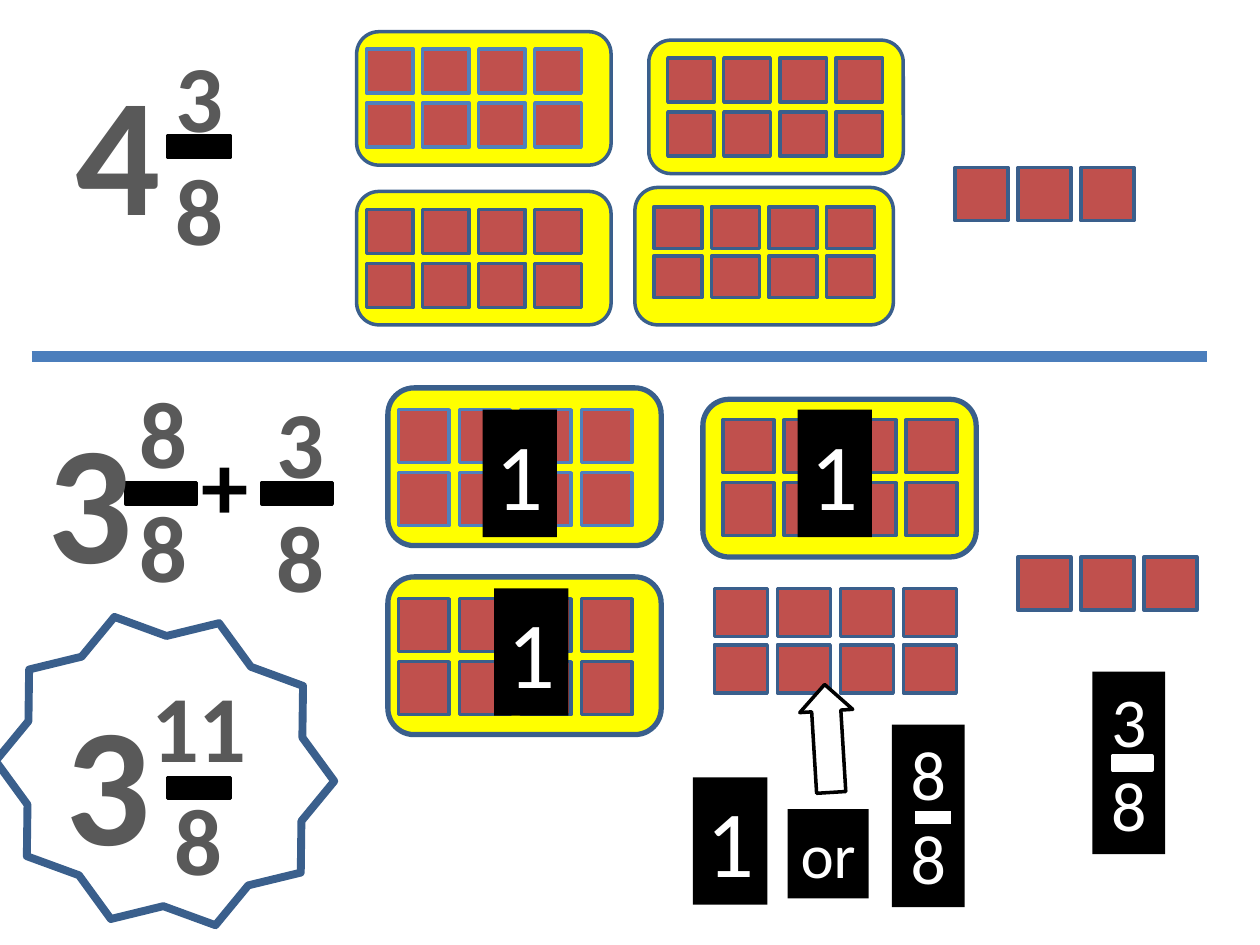
import dataclasses

import lxml.etree
import pptx
import pptx.dml.color
import pptx.enum.shapes
import pptx.enum.text
import pptx.oxml.ns
import pptx.util
from pptx.util import Cm

SHAPES = pptx.enum.shapes.MSO_SHAPE


@dataclasses.dataclass(frozen=True)
class Theme:
    font: str = "Calibri"
    digit: str = "595959"
    black: str = "000000"
    white: str = "FFFFFF"
    card: str = "FFFF00"
    tile: str = "C0504D"
    border: str = "3A5F8C"
    light_border: str = "4F81BD"
    divider: str = "4B7EBC"
    whole_size: int = 96
    part_size: int = 54
    label_size: int = 40
    word_size: int = 36


THEME = Theme()


def rgb(value):
    return pptx.dml.color.RGBColor.from_string(value)


def add_box(slide, kind, box, fill, line=None, width=2):
    """Add a filled preset shape; box is left, top, width, height in cm."""
    shape = slide.shapes.add_shape(kind, *map(Cm, box))
    shape.shadow.inherit = False
    shape.fill.solid()
    shape.fill.fore_color.rgb = rgb(fill)
    if line:
        shape.line.color.rgb = rgb(line)
        shape.line.width = pptx.util.Pt(width)
    else:
        shape.line.fill.background()
    return shape


def write(shape, text, size, color, bold=False, wrap=True):
    frame = shape.text_frame
    frame.text = text
    frame.word_wrap = wrap
    frame.vertical_anchor = pptx.enum.text.MSO_ANCHOR.TOP
    for paragraph in frame.paragraphs:
        paragraph.alignment = pptx.enum.text.PP_ALIGN.CENTER
        for run in paragraph.runs:
            run.font.name = THEME.font
            run.font.size = pptx.util.Pt(size)
            run.font.bold = bold
            run.font.color.rgb = rgb(color)


def add_text(slide, box, text, size, color=THEME.digit, wrap=True):
    write(slide.shapes.add_textbox(*map(Cm, box)), text, size, color, True, wrap)


def add_whole(slide, left, top, width, digit):
    add_text(slide, (left, top, width, 4.37), digit, THEME.whole_size)


def add_fraction(slide, left, top, width, parts, bar):
    """Add numerator over denominator; bar is left, top, width in cm."""
    add_text(slide, (left, top, width, 4.88), parts, THEME.part_size)
    add_box(slide, SHAPES.RECTANGLE, (*bar, 0.43), THEME.black, THEME.black)


def add_tiles(slide, origin, size, pitch, columns=4, rows=2, line=THEME.border):
    for row in range(rows):
        for column in range(columns):
            left = origin[0] + column * pitch[0]
            top = origin[1] + row * pitch[1]
            add_box(slide, SHAPES.RECTANGLE, (left, top, *size), THEME.tile, line)


def add_card(slide, box, width):
    add_box(slide, SHAPES.ROUNDED_RECTANGLE, box, THEME.card, THEME.border, width)


def add_label(slide, box, text, size):
    label = add_box(slide, SHAPES.RECTANGLE, box, THEME.black)
    write(label, text, size, THEME.white, wrap=False)


def add_fraction_label(slide, left, top, parts, bar, bar_line):
    add_label(slide, (left, top, 1.47, 3.68), parts, THEME.label_size)
    add_box(slide, SHAPES.RECTANGLE, bar, THEME.white, bar_line)


def add_divider(slide, left, right, top):
    divider = slide.shapes.add_connector(
        pptx.enum.shapes.MSO_CONNECTOR.STRAIGHT, Cm(left), Cm(top), Cm(right), Cm(top))
    divider.line.color.rgb = rgb(THEME.divider)
    divider.line.width = pptx.util.Pt(6)
    properties = divider.element.find(pptx.oxml.ns.qn("p:spPr"))
    lxml.etree.SubElement(properties, pptx.oxml.ns.qn("a:effectLst"))


def add_numbers(slide):
    # Star behind the answer
    star = add_box(slide, SHAPES.STAR_10_POINT, (0.05, 12.37, 6.55, 6.35),
                   THEME.white, THEME.border, 4.5)
    star.rotation = 20.1
    # Mixed number to regroup
    add_fraction(slide, 2.97, 0.64, 2.11, "3\n8", (3.38, 2.74, 1.27))
    add_whole(slide, 1.27, 0.84, 2.11, "4")
    # Regrouped sum
    add_fraction(slide, 2.11, 7.42, 2.36, "8\n8", (2.54, 9.73, 1.42))
    add_whole(slide, 0.64, 7.85, 2.36, "3")
    add_fraction(slide, 4.88, 7.62, 2.36, "3\n8", (5.28, 9.73, 1.42))
    add_text(slide, (3.81, 8.46, 1.47, 2.57), "+", THEME.part_size, THEME.black, False)
    # Answer
    add_fraction(slide, 2.74, 13.34, 2.54, "11\n8", (3.38, 15.67, 1.27))
    add_whole(slide, 1.07, 13.54, 2.11, "3")


def add_four_wholes(slide):
    for box in ((12.8, 3.78, 5.21, 2.77), (13.08, 0.81, 5.13, 2.69),
                (7.19, 3.86, 5.13, 2.69), (7.19, 0.64, 5.13, 2.69)):
        add_card(slide, box, 2)
    size, pitch = (0.94, 0.89), (1.13, 1.09)
    add_tiles(slide, (7.39, 0.99), size, pitch, line=THEME.light_border)
    for origin in ((7.39, 4.22), (13.46, 1.17)):
        add_tiles(slide, origin, size, pitch)
    add_tiles(slide, (13.18, 4.17), (0.97, 0.84), (1.16, 0.99))
    # Three eighths left over
    add_tiles(slide, (19.25, 3.38), (1.07, 1.07), (1.27, 0), columns=3, rows=1)


def add_three_wholes(slide):
    for left, top in ((14.17, 8.05), (7.82, 11.63), (7.82, 7.82)):
        add_card(slide, (left, top, 5.51, 3.18), 3)
    size, pitch = (1.02, 1.07), (1.23, 1.27)
    add_tiles(slide, (8.03, 8.26), size, pitch, line=THEME.light_border)
    for origin in ((8.03, 12.07), (14.58, 8.46)):
        add_tiles(slide, origin, size, pitch)
    # Whole broken into eighths, and three eighths left over
    add_tiles(slide, (14.4, 11.86), (1.07, 0.97), (1.27, 1.14))
    add_tiles(slide, (20.52, 11.23), (1.07, 1.07), (1.27, 0), columns=3, rows=1)


def add_labels(slide):
    add_fraction_label(slide, 17.98, 14.61, "8\n8", (18.42, 16.31, 0.79, 0.33), THEME.black)
    add_fraction_label(slide, 22.02, 13.54, "3\n8", (22.43, 15.24, 0.79, 0.28), THEME.white)
    for left, top in ((9.73, 8.26), (9.96, 11.86), (16.08, 8.26), (13.97, 15.67)):
        add_label(slide, (left, top, 1.5, 2.57), "1", THEME.part_size)
    add_label(slide, (15.88, 16.31, 1.63, 1.8), "or", THEME.word_size)
    # Arrow to the broken whole
    arrow = add_box(slide, SHAPES.RIGHT_ARROW, (15.6, 14.35, 2.18, 1.07),
                    THEME.white, THEME.black)
    arrow.adjustments[0] = 0.55
    arrow.rotation = 266.5


def main():
    deck = pptx.Presentation()
    deck.slide_width, deck.slide_height = Cm(25.4), Cm(19.05)
    slide = deck.slides.add_slide(deck.slide_layouts[6])
    add_numbers(slide)
    add_three_wholes(slide)
    add_four_wholes(slide)
    add_divider(slide, 0.64, 24.33, 7.19)
    add_labels(slide)
    deck.save("out.pptx")


if __name__ == "__main__":
    main()
